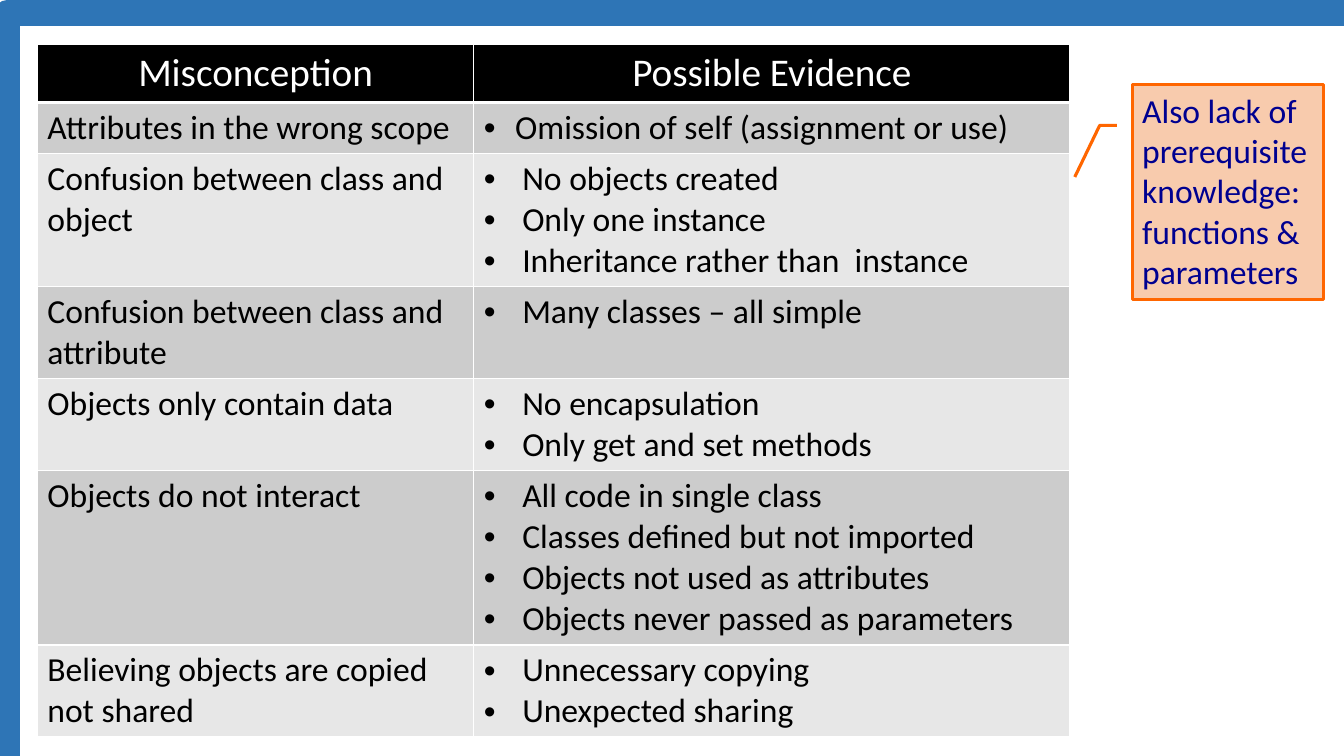
from lxml import etree
from pptx import Presentation
from pptx.dml.color import RGBColor
from pptx.enum.shapes import MSO_SHAPE
from pptx.enum.text import MSO_ANCHOR, PP_ALIGN
from pptx.oxml.ns import qn
from pptx.util import Inches, Pt

RECTANGLE = MSO_SHAPE.RECTANGLE
CALLOUT = MSO_SHAPE.LINE_CALLOUT_2
LEFT, CENTER = PP_ALIGN.LEFT, PP_ALIGN.CENTER
TOP, MIDDLE = MSO_ANCHOR.TOP, MSO_ANCHOR.MIDDLE

FONT = "Calibri"
COLORS = {
    "frame": "2E75B6",
    "header": "000000",
    "dark band": "CCCCCC",
    "light band": "E7E7E7",
    "white": "FFFFFF",
    "text": "000000",
    "callout": "F8CBAD",
    "callout line": "FF6600",
    "callout text": "000090",
}
HEADINGS = ["Misconception", "Possible Evidence"]
MISCONCEPTIONS = [
    ("Attributes in the wrong scope", ["Omission of self (assignment or use)"]),
    ("Confusion between class and object",
     ["No objects created", "Only one instance", "Inheritance rather than  instance"]),
    ("Confusion between class and attribute", ["Many classes – all simple"]),
    ("Objects only contain data", ["No encapsulation", "Only get and set methods"]),
    ("Objects do not interact",
     ["All code in single class", "Classes defined but not imported",
      "Objects not used as attributes", "Objects never passed as parameters"]),
    ("Believing objects are copied not shared",
     ["Unnecessary copying", "Unexpected sharing"]),
]
COLUMN_WIDTHS = [4.33, 5.91]
LINES_PER_ROW = [1, 3, 2, 2, 4, 2]
HEADER_HEIGHT, LINE_HEIGHT, ROW_PADDING = 0.57, 0.4, 0.1


def color(name):
    return RGBColor.from_string(COLORS[name])


def style_paragraph(para, size, color_name, align=LEFT):
    para.alignment = align
    para.font.name = FONT
    para.font.size = Pt(size)
    para.font.bold = False
    para.font.color.rgb = color(color_name)


def add_bullet(para, indent):
    properties = para._p.get_or_add_pPr()
    properties.set("marL", str(Inches(indent)))
    properties.set("indent", str(-Inches(indent)))
    etree.SubElement(properties, qn("a:buFont"), typeface="Arial")
    etree.SubElement(properties, qn("a:buChar"), char="•")


def add_borders(cell, bottom_width):
    properties = cell._tc.get_or_add_tcPr()
    for side, width in (("L", 1), ("R", 1), ("T", 1), ("B", bottom_width)):
        line = etree.SubElement(properties, qn(f"a:ln{side}"), w=str(Pt(width)))
        fill = etree.SubElement(line, qn("a:solidFill"))
        etree.SubElement(fill, qn("a:srgbClr"), val=COLORS["white"])


def fill_cell(cell, texts, fill, size=24, text_color="text", align=LEFT,
              anchor=TOP, indent=None, bottom_width=1):
    add_borders(cell, bottom_width)
    cell.fill.solid()
    cell.fill.fore_color.rgb = color(fill)
    cell.vertical_anchor = anchor
    cell.text = "\n".join(texts)
    for para in cell.text_frame.paragraphs:
        if indent:
            add_bullet(para, indent)
        style_paragraph(para, size, text_color, align)


def add_box(page, kind, box, line_color, line_width):
    shape = page.shapes.add_shape(kind, *map(Inches, box))
    shape.shadow.inherit = False
    shape.line.color.rgb = color(line_color)
    shape.line.width = Pt(line_width)
    return shape


def add_frame(page, box):
    add_box(page, RECTANGLE, box, "frame", 18).fill.background()


def add_misconception_table(page, left, top):
    heights = [HEADER_HEIGHT] + [n * LINE_HEIGHT + ROW_PADDING for n in LINES_PER_ROW]
    table = page.shapes.add_table(
        len(heights), len(COLUMN_WIDTHS), Inches(left), Inches(top),
        Inches(sum(COLUMN_WIDTHS)), Inches(sum(heights))).table
    table.horz_banding = False
    for column, width in zip(table.columns, COLUMN_WIDTHS):
        column.width = Inches(width)
    for row, height in zip(table.rows, heights):
        row.height = Inches(height)
    for index, heading in enumerate(HEADINGS):
        fill_cell(table.cell(0, index), [heading], "header", 28, "white",
                  CENTER, MIDDLE, bottom_width=3)
    for index, (misconception, evidence) in enumerate(MISCONCEPTIONS, 1):
        band = "dark band" if index % 2 else "light band"
        fill_cell(table.cell(index, 0), [misconception], band)
        fill_cell(table.cell(index, 1), evidence, band,
                  indent=0.31 if index == 1 else 0.38)


def add_callout(page, box, text):
    callout = add_box(page, CALLOUT, box, "callout line", 2.25)
    for index, value in enumerate([0.19, -0.08, 0.19, -0.17, 0.43, -0.3]):
        callout.adjustments[index] = value
    callout.fill.solid()
    callout.fill.fore_color.rgb = color("callout")
    frame = callout.text_frame
    frame.word_wrap = True
    frame.vertical_anchor = TOP
    frame.text = text
    style_paragraph(frame.paragraphs[0], 24, "callout text")


def main():
    deck = Presentation()
    deck.slide_width, deck.slide_height = Inches(13.33), Inches(7.5)
    page = deck.slides.add_slide(deck.slide_layouts[6])
    add_frame(page, (0.07, 0.13, 13.39, 7.55))
    add_misconception_table(page, 0.37, 0.44)
    add_callout(page, (11.23, 0.84, 1.9, 2.13),
                "Also lack of prerequisite knowledge: functions & parameters")
    deck.save("out.pptx")


if __name__ == "__main__":
    main()
